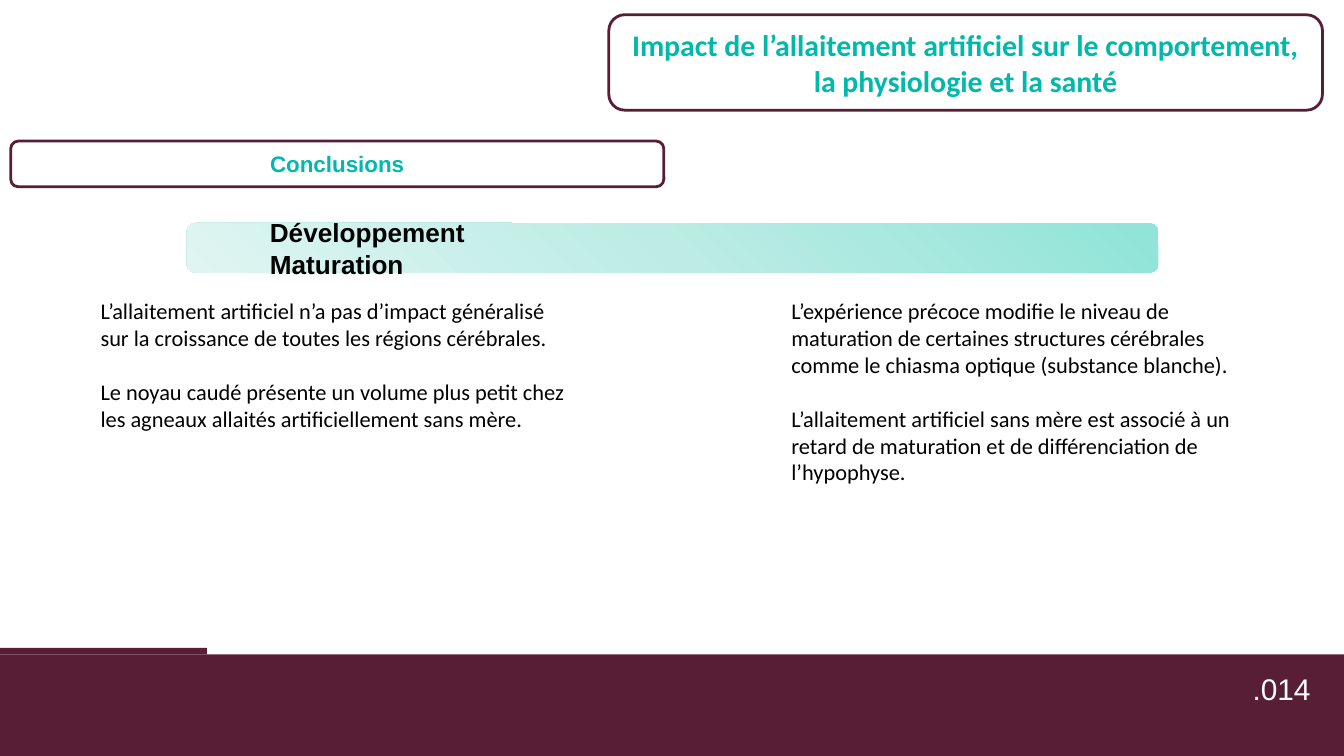
import copy
from pptx import Presentation
from pptx import util as u
from pptx.dml.color import RGBColor
from pptx.enum import shapes, text
from pptx.oxml.ns import qn

W = 10
H = W * 9 / 16
PLUM, TEAL, WHITE, BLACK = "571E36", "00B9AB", "FFFFFF", "000000"
GRADIENT = [(0, "90E4D8"), (0.5, "BCECE5"), (1, "DFF5F2")]

FOOTER = [(0, 4.87, W, H - 4.87), (0, 4.82, 1.54, 0.05)]
PAGE = ".014"
TITLE = "Impact de l’allaitement artificiel sur le comportement, la physiologie et la santé"
SECTION = "Conclusions"
THEMES = "Développement\vMaturation"
COLUMNS = [
    (5.79, 1.51,
     ["L’expérience précoce modifie le niveau de maturation de certaines structures "
      "cérébrales comme le chiasma optique (substance blanche).",
      "L’allaitement artificiel sans mère est associé à un retard de maturation et "
      "de différenciation de l’hypophyse."]),
    (0.65, 1.11,
     ["L’allaitement artificiel n’a pas d’impact généralisé sur la croissance "
      "de toutes les régions cérébrales.",
      "Le noyau caudé présente un volume plus petit chez les agneaux allaités "
      "artificiellement sans mère."]),
]
LEFT, CENTER, RIGHT = text.PP_ALIGN.LEFT, text.PP_ALIGN.CENTER, text.PP_ALIGN.RIGHT
RECT, ROUND = shapes.MSO_SHAPE.RECTANGLE, shapes.MSO_SHAPE.ROUNDED_RECTANGLE


def rgb(color):
    return RGBColor.from_string(color)


def add_box(kind, at, fill=None, line=None):
    sp = slide.shapes.add_shape(kind, *map(u.Inches, at))
    sp.shadow.inherit = False
    if fill:
        sp.fill.solid()
        sp.fill.fore_color.rgb = rgb(fill)
    else:
        sp.fill.background()
    if line:
        sp.line.color.rgb = rgb(line)
        sp.line.width = u.Pt(1.5)
    else:
        sp.line.fill.background()
    return sp


def write(sp, lines, size, font, color, bold=False, align=LEFT, gap=0,
          anchor=text.MSO_ANCHOR.MIDDLE):
    tf = sp.text_frame
    tf.word_wrap = True
    tf.vertical_anchor = anchor
    for i, line in enumerate(lines):
        p = tf.add_paragraph() if i else tf.paragraphs[0]
        p.text = line
        p.alignment = align
        if i and gap:
            p.space_before = u.Pt(gap)
        p.font.size, p.font.name, p.font.bold = u.Pt(size), font, bold
        p.font.color.rgb = rgb(color)


def add_text(at, lines, *style, **options):
    sp = slide.shapes.add_textbox(*map(u.Inches, at))
    write(sp, lines, *style, anchor=text.MSO_ANCHOR.TOP, **options)


def fill_gradient(sp, stops, angle):
    sp.fill.gradient()
    sp.fill.gradient_angle = angle
    gs_list = sp._element.spPr.find(qn("a:gradFill")).find(qn("a:gsLst"))
    while len(gs_list) < len(stops):
        gs_list.append(copy.deepcopy(gs_list[0]))
    for stop, (position, color) in zip(sp.fill.gradient_stops, stops):
        stop.position = position
        stop.color.rgb = rgb(color)


prs = Presentation()
prs.slide_width, prs.slide_height = u.Inches(W), u.Inches(H)
slide = prs.slides.add_slide(prs.slide_layouts[6])

for at in FOOTER:
    add_box(RECT, at, PLUM)
add_text((8.62, 4.94, 1.23, 0.27), [PAGE], 16, "Arial", WHITE, align=RIGHT)

title = add_box(ROUND, (4.53, 0.11, 5.31, 0.71), WHITE, PLUM)
write(title, [TITLE], 16, "Calibri", TEAL, bold=True, align=CENTER)
section = add_box(ROUND, (0.08, 1.05, 4.86, 0.34), line=PLUM)
write(section, [SECTION], 12, "Arial", TEAL, bold=True, align=CENTER)

band = add_box(ROUND, (1.39, 1.66, 7.23, 0.37))
fill_gradient(band, GRADIENT, 225)
band.text_frame.margin_left = u.Inches(0.6)
write(band, [THEMES], 14, "Arial", BLACK, bold=True)

for left, height, paragraphs in COLUMNS:
    add_text((left, 2.16, 3.7, height), paragraphs, 12, "Calibri", BLACK, gap=14.6)

prs.save("out.pptx")
